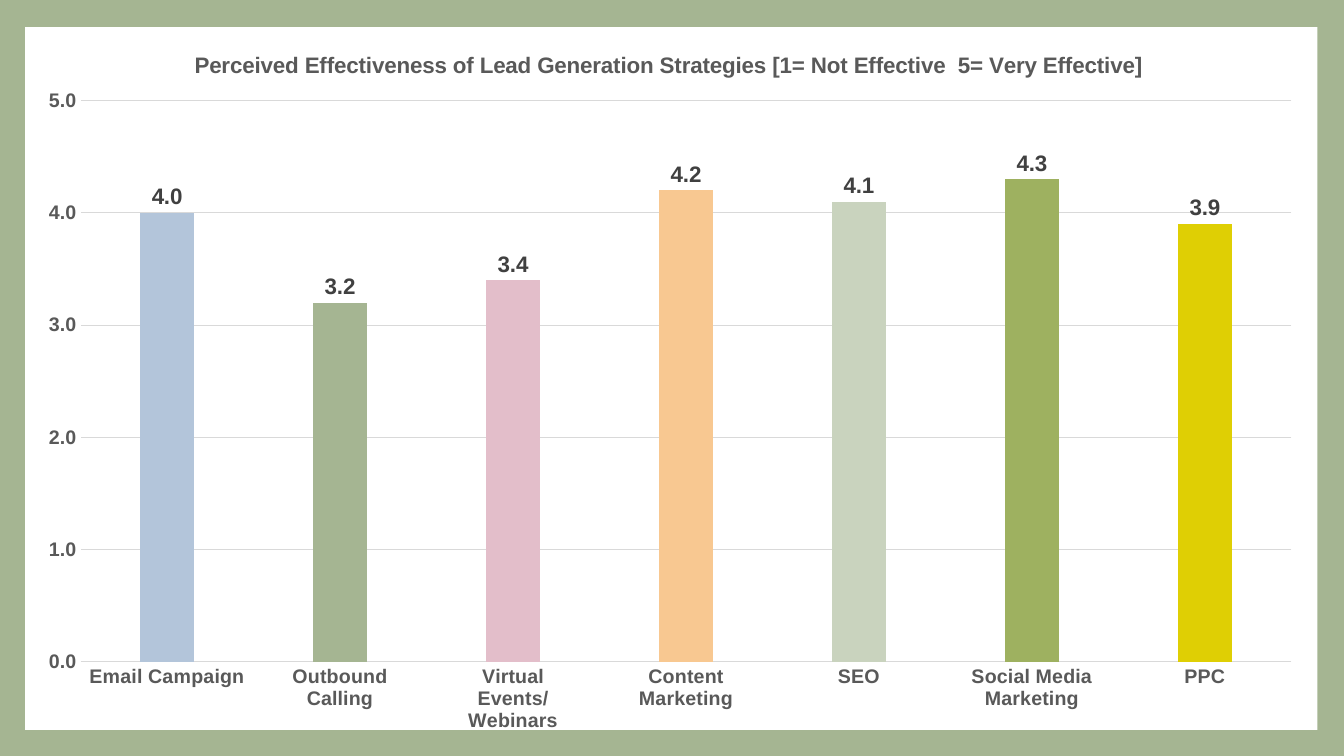
from pptx import Presentation
from pptx.chart.data import CategoryChartData
from pptx.dml.color import RGBColor
from pptx.enum.chart import XL_CHART_TYPE as CT, XL_LABEL_POSITION as LP, XL_TICK_MARK as TM
from pptx.enum.shapes import MSO_SHAPE as MS
from pptx.oxml import parse_xml
from pptx.oxml.ns import nsdecls, qn
from pptx.util import Pt

TITLE = "Perceived Effectiveness of Lead Generation Strategies [1= Not Effective  5= Very Effective]"
SCORES = [
    ("Email Campaign", 4.0, "B3C5DA"),
    ("Outbound Calling", 3.2, "A5B592"),
    ("Virtual Events/Webinars", 3.4, "E3BECA"),
    ("Content Marketing", 4.2, "F8C891"),
    ("SEO", 4.1, "C9D3BE"),
    ("Social Media Marketing", 4.3, "9EB160"),
    ("PPC", 3.9, "DFCF04"),
]


def paint(fill, color):
    fill.solid()
    fill.fore_color.rgb = RGBColor.from_string(color)


def style(font, size=14, color="595959", bold=True, name="Arial"):
    font.size, font.bold, font.name = Pt(size), bold, name
    paint(font.fill, color)


def write(tf, text, **fmt):
    r = tf.paragraphs[0].add_run()
    r.text = text
    style(r.font, **fmt)


def rule(line, color="D9D9D9"):
    paint(line.fill, color)
    line.width = Pt(0.75)


def place(parent, index, target="", **box):
    old = parent.find(qn("c:layout"))
    if old is not None:
        parent.remove(old)
    inner = f'<c:layoutTarget val="{target}"/>' if target else ""
    modes = "".join(f'<c:{k}Mode val="edge"/>' for k in "xy")
    sizes = "".join(f'<c:{k} val="{v}"/>' for k, v in box.items())
    parent.insert(index, parse_xml(
        f'<c:layout {nsdecls("c")}><c:manualLayout>{inner}{modes}{sizes}'
        '</c:manualLayout></c:layout>'))


def add_panel(s, x, y, w, h):
    sp = s.shapes.add_shape(MS.RECTANGLE, Pt(x), Pt(y), Pt(w), Pt(h))
    sp.shadow.inherit = False
    paint(sp.fill, "FFFFFF")
    sp.line.fill.background()


def format_axes(chart):
    cat, val = chart.category_axis, chart.value_axis
    for axis in (cat, val):
        axis.major_tick_mark = axis.minor_tick_mark = TM.NONE
        style(axis.tick_labels.font)
    rule(cat.format.line)
    val.format.line.fill.background()
    val.minimum_scale, val.maximum_scale, val.major_unit = 0, 5, 1
    val.has_major_gridlines = True
    rule(val.major_gridlines.format.line)
    val.tick_labels.number_format = "0.0"
    val.tick_labels.number_format_is_linked = False


def format_bars(plot):
    plot.gap_width, plot.overlap, plot.vary_by_categories = 219, -27, False
    series = plot.series[0]
    paint(series.format.fill, "A5B592")
    for i, (_, _, color) in enumerate(SCORES):
        paint(series.points[i].format.fill, color)
    labels = series.data_labels
    labels.show_value = True
    labels.position = LP.OUTSIDE_END
    labels.number_format, labels.number_format_is_linked = "0.0", False
    style(labels.font, size=16, color="404040")


def add_scores(s, x, y, w, h):
    data = CategoryChartData(number_format="0.0")
    data.categories = [name for name, _, _ in SCORES]
    data.add_series("Series 1", [score for _, score, _ in SCORES])
    frame = s.shapes.add_chart(CT.COLUMN_CLUSTERED, Pt(x), Pt(y), Pt(w), Pt(h), data)
    chart = frame.chart
    style(chart.font, size=10, color="000000", bold=False, name="Calibri")
    chart.has_legend = False
    chart.has_title = True
    write(chart.chart_title.text_frame, TITLE, size=16)
    chart.chart_title.include_in_layout = False
    format_axes(chart)
    format_bars(chart.plots[0])
    root = chart.element.find(qn("c:chart"))
    place(root.find(qn("c:title")), 1, x=0.13, y=0.035)
    place(root.find(qn("c:plotArea")), 0, "inner", x=0.045, y=0.111, w=0.936, h=0.796)


def main():
    prs = Presentation()
    prs.slide_width, prs.slide_height = Pt(960), Pt(540)
    s = prs.slides.add_slide(prs.slide_layouts[6])
    paint(s.background.fill, "A5B592")
    add_panel(s, 18, 19.4, 923, 502)
    add_scores(s, 16, 16, 924, 504)
    prs.save("out.pptx")


if __name__ == "__main__":
    main()
